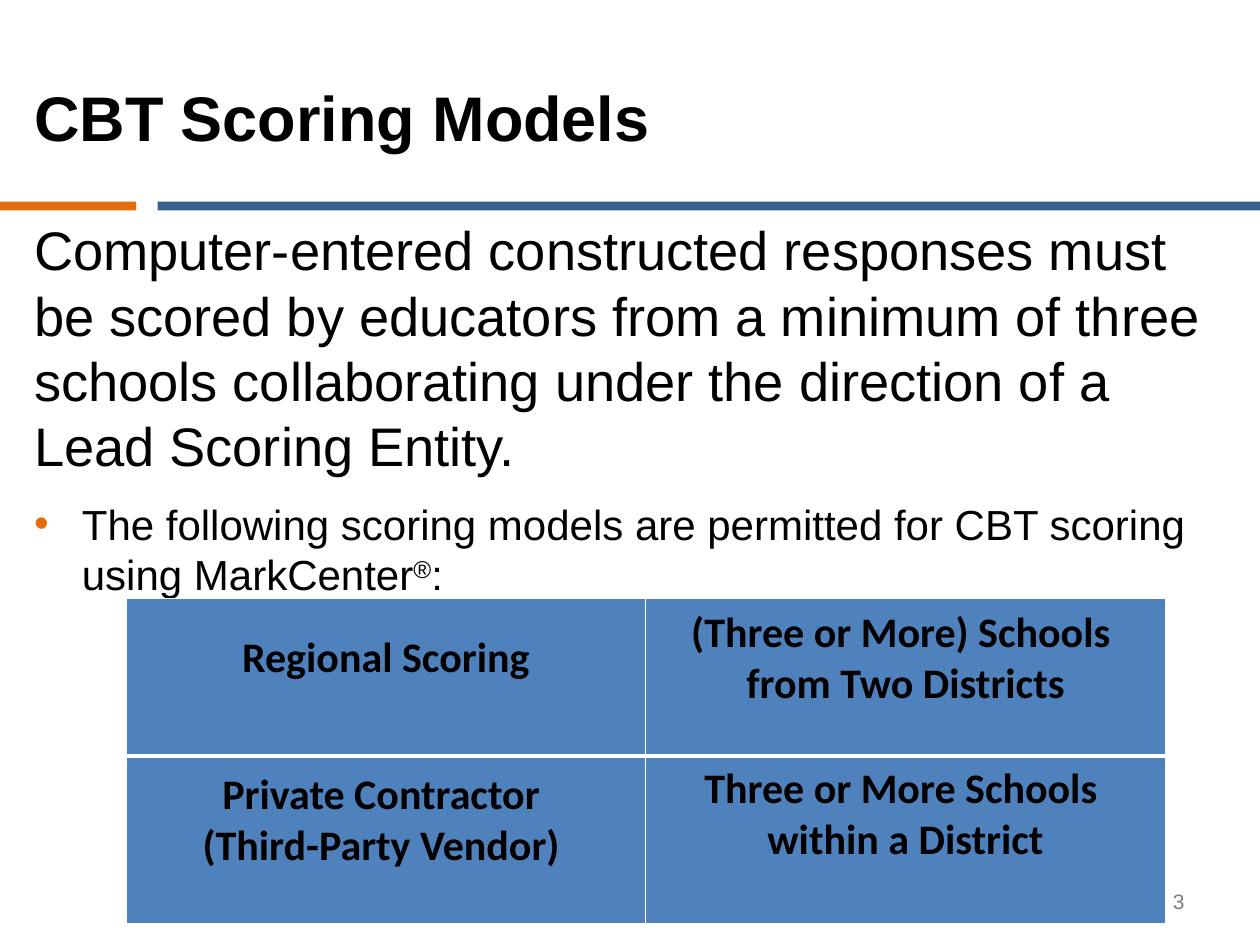
import lxml.etree
import pptx
import pptx.dml.color
import pptx.enum.shapes
import pptx.enum.text
import pptx.oxml.ns
import pptx.util

COLORS = {
    "text": "000000", "bar": "376092", "accent": "E46C0A",
    "cell": "4F81BD", "border": "FFFFFF", "number": "808080",
}
ALIGN = pptx.enum.text.PP_ALIGN
MIDDLE = pptx.enum.text.MSO_ANCHOR.MIDDLE
BORDER_POINTS = {"lnL": 1, "lnR": 1, "lnT": 1, "lnB": 1}


def rgb(name):
    return pptx.dml.color.RGBColor.from_string(COLORS[name])


def set_values(target, values):
    for name, value in values.items():
        setattr(target, name, value)


def add_xml(parent, tag, **attributes):
    return lxml.etree.SubElement(parent, pptx.oxml.ns.qn(f"a:{tag}"), attributes)


class SlideBuilder:
    """Holds the presentation, its current slide and the shared text style."""

    def __init__(self, width, height):
        self.presentation = pptx.Presentation()
        self.presentation.slide_width = pptx.util.Inches(width)
        self.presentation.slide_height = pptx.util.Inches(height)
        self.slide = self.presentation.slides.add_slide(self.presentation.slide_layouts[1])

    def box(self, left, top, width, height):
        """Turn shares of the slide's size into lengths."""
        across, down = self.presentation.slide_width, self.presentation.slide_height
        return [round(left * across), round(top * down), round(width * across), round(height * down)]

    def place(self, shape, shares):
        set_values(shape, dict(zip(("left", "top", "width", "height"), self.box(*shares))))

    def format_font(self, font, size, color="text", name="Arial", bold=False):
        set_values(font, {"size": pptx.util.Pt(size), "name": name, "bold": bold})
        font.color.rgb = rgb(color)

    def bar(self, shares, color):
        shape = self.slide.shapes.add_shape(
            pptx.enum.shapes.MSO_SHAPE.RECTANGLE, *self.box(*shares))
        shape.shadow.inherit = False
        shape.fill.solid()
        shape.fill.fore_color.rgb = rgb(color)
        shape.line.fill.background()

    def title(self, text, shares):
        title = self.slide.shapes.title
        self.place(title, shares)
        title.text_frame.text = text
        title.text_frame.vertical_anchor = MIDDLE
        paragraph = title.text_frame.paragraphs[0]
        paragraph.alignment = ALIGN.LEFT
        self.format_font(paragraph.font, 36, bold=True)

    def body(self, items, shares):
        """Fill the body with (runs, size, bulleted) items; a run is (text, raised)."""
        body = self.slide.placeholders[1]
        self.place(body, shares)
        frame = body.text_frame
        frame.auto_size = pptx.enum.text.MSO_AUTO_SIZE.NONE
        for index, (runs, size, bulleted) in enumerate(items):
            paragraph = frame.add_paragraph() if index else frame.paragraphs[0]
            set_values(paragraph, {
                "line_spacing": 1.0,
                "space_before": pptx.util.Pt(6 if index else 0),
                "space_after": pptx.util.Pt(6),
            })
            self.bullet(paragraph, 0.38 if bulleted else 0)
            self.format_font(paragraph.font, size)
            for text, raised in runs:
                run = paragraph.add_run()
                run.text = text
                self.format_font(run.font, size)
                if raised:
                    run.font._element.set("baseline", "30000")

    def bullet(self, paragraph, indent):
        properties = paragraph._p.get_or_add_pPr()
        length = pptx.util.Inches(indent)
        properties.set("marL", str(length))
        properties.set("indent", str(-length))
        if indent:
            add_xml(add_xml(properties, "buClr"), "srgbClr", val=COLORS["accent"])
            add_xml(properties, "buFont", typeface="Arial")
            add_xml(properties, "buChar", char="•")
        else:
            add_xml(properties, "buNone")

    def number(self, text, shares):
        frame = self.slide.shapes.add_textbox(*self.box(*shares)).text_frame
        set_values(frame, {"word_wrap": True, "vertical_anchor": MIDDLE, "text": text})
        frame.paragraphs[0].alignment = ALIGN.RIGHT
        self.format_font(frame.paragraphs[0].font, 12, "number")

    def table(self, rows, row_shares, shares):
        """Draw rows of (text, bottom margin) cells."""
        table = self.slide.shapes.add_table(
            len(rows), len(rows[0]), *self.box(*shares)).table
        for row_index, row in enumerate(rows):
            table.rows[row_index].height = round(
                row_shares[row_index] * self.presentation.slide_height)
            for column_index, (text, bottom) in enumerate(row):
                self.cell(table.cell(row_index, column_index), text, bottom, row_index)

    def cell(self, cell, text, bottom, row_index):
        set_values(cell, {
            "text": text, "vertical_anchor": MIDDLE,
            "margin_bottom": pptx.util.Inches(bottom),
        })
        divider = "lnT" if row_index else "lnB"
        for tag, points in {**BORDER_POINTS, divider: 3}.items():
            line = add_xml(cell._tc.get_or_add_tcPr(), tag, w=str(pptx.util.Pt(points)))
            add_xml(add_xml(line, "solidFill"), "srgbClr", val=COLORS["border"])
        cell.fill.solid()
        cell.fill.fore_color.rgb = rgb("cell")
        for paragraph in cell.text_frame.paragraphs:
            paragraph.alignment = ALIGN.CENTER
            self.format_font(paragraph.font, 24, name="Calibri", bold=True)


def main():
    builder = SlideBuilder(10, 7.5)
    bar_top, bar_height = 1.6 / 7.5, 0.07 / 7.5
    builder.bar((0.125, bar_top, 0.875, bar_height), "bar")
    builder.bar((0, bar_top, 0.108, bar_height), "accent")
    builder.title("CBT Scoring Models", (0.017, 0.04, 0.75, 1.25 / 7.5))
    builder.body([
        ([("Computer-entered constructed responses must be scored by educators "
           "from a minimum of three schools collaborating under the direction "
           "of a Lead Scoring Entity.", False)], 31, False),
        ([("The following scoring models are permitted for CBT scoring using MarkCenter", False),
          ("®", True), (":", False)], 24, True),
    ], (0.017, 1.67 / 7.5, 0.975, 3.42 / 7.5))
    builder.number("3", (0.717, 6.95 / 7.5, 0.233, 0.4 / 7.5))
    builder.table([
        [("Regional Scoring", 0.35),
         ("(Three or More) Schools \nfrom Two Districts", 0.35)],
        [("Private Contractor \n(Third-Party Vendor) ", 0.35),
         ("Three or More Schools \nwithin a District", 0.45)],
    ], (1.25 / 7.5, 1.33 / 7.5), (0.1, 4.75 / 7.5, 0.825, 2.58 / 7.5))
    builder.presentation.save("out.pptx")


if __name__ == "__main__":
    main()
